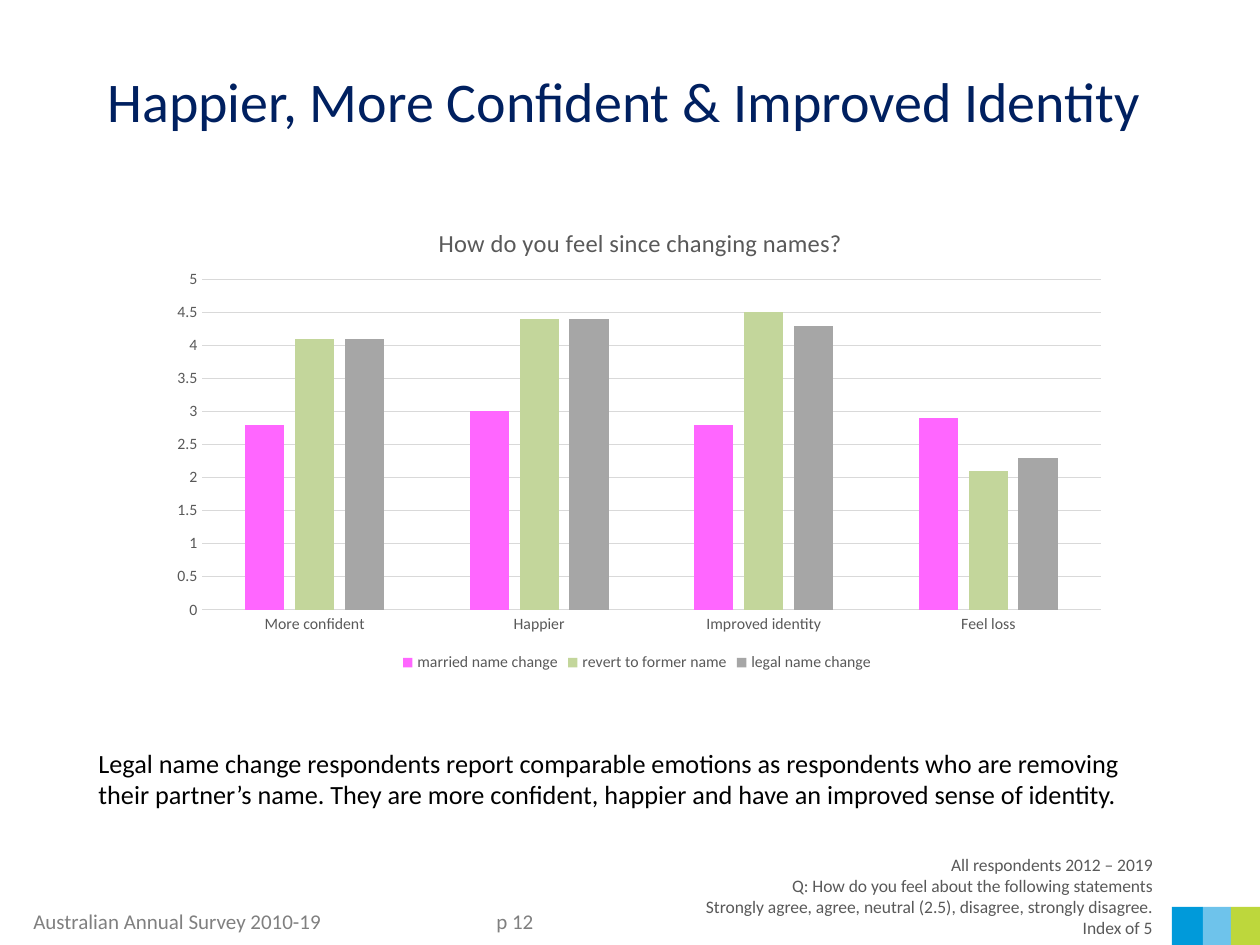
from dataclasses import dataclass

from lxml.etree import SubElement
from pptx import Presentation
from pptx.chart.data import CategoryChartData
from pptx.dml.color import RGBColor
from pptx.enum.chart import XL_CHART_TYPE, XL_LEGEND_POSITION, XL_TICK_MARK
from pptx.enum.shapes import MSO_SHAPE
from pptx.enum.text import MSO_ANCHOR, PP_ALIGN
from pptx.oxml.ns import qn
from pptx.util import Emu, Pt


@dataclass(frozen=True)
class Theme:
    """Fonts, colours and type sizes of the slide."""
    font: str = "Calibri"
    navy: str = "002060"
    black: str = "000000"
    text: str = "595959"
    footer: str = "808080"
    grid: str = "D9D9D9"
    series: tuple = ("FF66FF", "C3D69B", "A6A6A6")
    blocks: tuple = ("009ADA", "6EC3EB", "BDD73C")
    title_size: int = 32
    body_size: int = 15
    chart_title_size: int = 14
    footer_size: int = 12
    note_size: int = 10
    label_size: int = 9


THEME = Theme()
CATEGORIES = ["More confident", "Happier", "Improved identity", "Feel loss"]
SERIES = {
    "married name change": (2.8, 3, 2.8, 2.9),
    "revert to former name": (4.1, 4.4, 4.5, 2.1),
    "legal name change": (4.1, 4.4, 4.3, 2.3),
}
BODY = ("Legal name change respondents report comparable emotions as respondents "
        "who are removing their partner’s name. They are more confident, happier "
        "and have an improved sense of identity.")
NOTES = [
    "All respondents 2012 – 2019",
    "Q: How do you feel about the following statements",
    "Strongly agree, agree, neutral (2.5), disagree, strongly disagree.",
    "Index of 5",
]


def px(n):
    """Turn pixels into EMU at 126 pixels to the inch."""
    return Emu(round(n * 914400 / 126))


def style(font, size, color):
    """Set the theme font with a size and a colour."""
    font.name = THEME.font
    font.size = Pt(size)
    font.bold = False
    font.color.rgb = RGBColor.from_string(color)


def add_text(s, box, lines, size, color, align=PP_ALIGN.LEFT,
             anchor=MSO_ANCHOR.TOP, wrap=True, tab=None):
    """Add a text box with one paragraph a line."""
    tf = s.shapes.add_textbox(*map(px, box)).text_frame
    tf.word_wrap = wrap
    tf.vertical_anchor = anchor
    for i, line in enumerate(lines):
        p = tf.paragraphs[0] if i == 0 else tf.add_paragraph()
        p.text = line
        p.alignment = align
        if tab:
            tabs = SubElement(p._p.get_or_add_pPr(), qn("a:tabLst"))
            SubElement(tabs, qn("a:tab"), pos=str(px(tab)), algn="l")
        style(p.font, size, color)


def add_block(s, box, color):
    """Add a plain filled rectangle."""
    sp = s.shapes.add_shape(MSO_SHAPE.RECTANGLE, *map(px, box))
    sp.shadow.inherit = False
    sp.fill.solid()
    sp.fill.fore_color.rgb = RGBColor.from_string(color)
    sp.line.fill.background()


def set_layout(element, **places):
    """Place a chart part by fractions of the chart's size."""
    layout = element.find(qn("c:layout"))
    if layout is None:
        layout = element.makeelement(qn("c:layout"))
        tx = element.find(qn("c:tx"))
        element.insert(0 if tx is None else element.index(tx) + 1, layout)
    manual = SubElement(layout, qn("c:manualLayout"))
    if "w" in places:
        SubElement(manual, qn("c:layoutTarget"), val="inner")
    for mode in ("xMode", "yMode"):
        SubElement(manual, qn(f"c:{mode}"), val="edge")
    for name, value in places.items():
        SubElement(manual, qn(f"c:{name}"), val=str(value))


def style_line(line):
    """Draw a thin grey chart line."""
    line.color.rgb = RGBColor.from_string(THEME.grid)
    line.width = Pt(0.75)


def add_survey_chart(s, box):
    """Add the clustered columns with title, axes and legend."""
    data = CategoryChartData(number_format="0.0")
    data.categories = CATEGORIES
    for name, values in SERIES.items():
        data.add_series(name, values)
    chart = s.shapes.add_chart(
        XL_CHART_TYPE.COLUMN_CLUSTERED, *map(px, box), data).chart
    style(chart.font, THEME.label_size, THEME.text)

    chart.has_title = True
    p = chart.chart_title.text_frame.paragraphs[0]
    p.text = "How do you feel since changing names?"
    style(p.font, THEME.chart_title_size, THEME.text)
    chart.chart_title.include_in_layout = False
    set_layout(chart.chart_title._element, x=0.29, y=0.05)

    plot = chart.plots[0]
    plot.gap_width, plot.overlap, plot.vary_by_categories = 219, -27, False
    for series, color in zip(plot.series, THEME.series):
        series.format.fill.solid()
        series.format.fill.fore_color.rgb = RGBColor.from_string(color)
    set_layout(chart._chartSpace.chart.plotArea, x=0.05, y=0.17, w=0.93, h=0.69)

    for axis in (chart.category_axis, chart.value_axis):
        axis.major_tick_mark = axis.minor_tick_mark = XL_TICK_MARK.NONE
        style(axis.tick_labels.font, THEME.label_size, THEME.text)
    style_line(chart.category_axis.format.line)
    values = chart.value_axis
    values.minimum_scale, values.maximum_scale, values.major_unit = 0, 5, 0.5
    values.tick_labels.number_format = "General"
    values.tick_labels.number_format_is_linked = False
    values.format.line.fill.background()
    style_line(values.major_gridlines.format.line)

    chart.has_legend = True
    chart.legend.position = XL_LEGEND_POSITION.BOTTOM
    chart.legend.include_in_layout = False
    style(chart.legend.font, THEME.label_size, THEME.text)


def main():
    """Build the slide and save it."""
    prs = Presentation()
    prs.slide_width, prs.slide_height = px(1260), px(945)
    s = prs.slides.add_slide(prs.slide_layouts[6])
    add_text(s, (21, 902, 1018, 38), ["Australian Annual Survey 2010-19\tp 12"],
             THEME.footer_size, THEME.footer, tab=463)
    edges = (1172, 1203, 1231, 1260)
    for left, right, color in zip(edges, edges[1:], THEME.blocks):
        add_block(s, (left, 907, right - left, 38), color)
    add_survey_chart(s, (154, 198, 966, 479))
    add_text(s, (86, 741, 1102, 77), [BODY], THEME.body_size, THEME.black)
    add_text(s, (685, 848, 480, 97), NOTES, THEME.note_size, THEME.text,
             align=PP_ALIGN.RIGHT, wrap=False)
    add_text(s, (95, 21, 1134, 158), ["Happier, More Confident & Improved Identity"],
             THEME.title_size, THEME.navy, anchor=MSO_ANCHOR.MIDDLE)
    prs.save("out.pptx")


if __name__ == "__main__":
    main()
